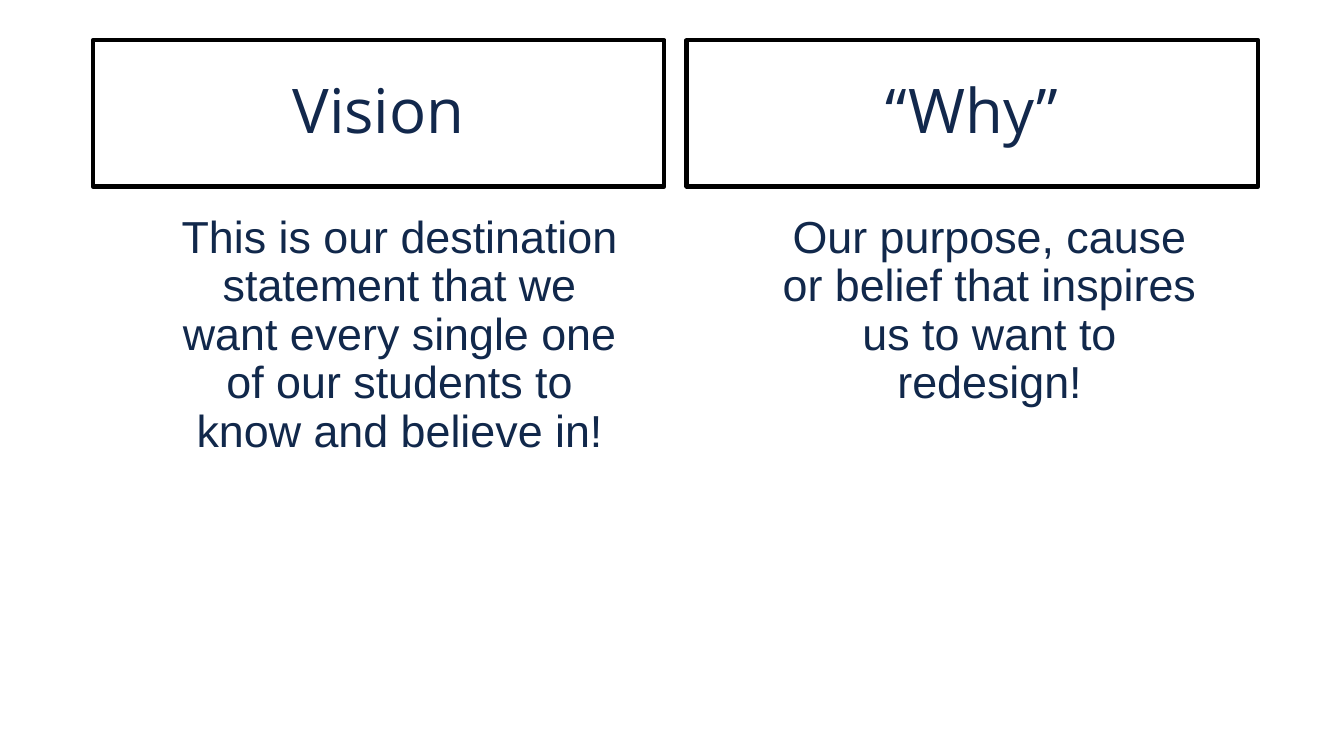
from pptx import Presentation
from pptx.dml.color import RGBColor
from pptx.enum import shapes, text
from pptx.util import Inches, Pt

BLACK = RGBColor(0x00, 0x00, 0x00)
TITLE_NAVY = RGBColor(0x12, 0x28, 0x4C)
BODY_NAVY = RGBColor(0x11, 0x28, 0x4B)


def write(sp, words, *, font, size, color, anchor, inset_x, inset_y):
    tf = sp.text_frame
    tf.word_wrap = True
    tf.vertical_anchor = anchor
    tf.margin_left = tf.margin_right = Inches(inset_x)
    tf.margin_top = tf.margin_bottom = Inches(inset_y)
    p = tf.paragraphs[0]
    p.alignment = text.PP_ALIGN.CENTER
    p.line_spacing = 0.9
    r = p.add_run()
    r.text = words
    r.font.name = font
    r.font.size = Pt(size)
    r.font.color.rgb = color


prs = Presentation()
prs.slide_width = Inches(13.33)
prs.slide_height = Inches(7.5)
s = prs.slides.add_slide(prs.slide_layouts[6])

columns = [
    ("Vision", 0.92, 1.59, 4.75,
     "This is our destination statement that we want every single one "
     "of our students to know and believe in!"),
    ("“Why”", 6.81, 7.59, 4.45,
     "Our purpose, cause or belief that inspires us to want to redesign!"),
]

for title, title_left, body_left, body_width, body in columns:
    sp = s.shapes.add_shape(shapes.MSO_SHAPE.RECTANGLE, Inches(title_left),
                            Inches(0.4), Inches(5.67), Inches(1.45))
    sp.shadow.inherit = False
    sp.fill.background()
    sp.line.color.rgb = BLACK
    sp.line.width = Pt(3)
    write(sp, title, font="Open Sans", size=44, color=TITLE_NAVY,
          anchor=text.MSO_ANCHOR.MIDDLE, inset_x=0.1, inset_y=0.05)

    sp = s.shapes.add_textbox(Inches(body_left), Inches(2),
                              Inches(body_width), Inches(4.37))
    write(sp, body, font="Arial", size=32, color=BODY_NAVY,
          anchor=text.MSO_ANCHOR.TOP, inset_x=0.13, inset_y=0.13)

prs.save("out.pptx")
